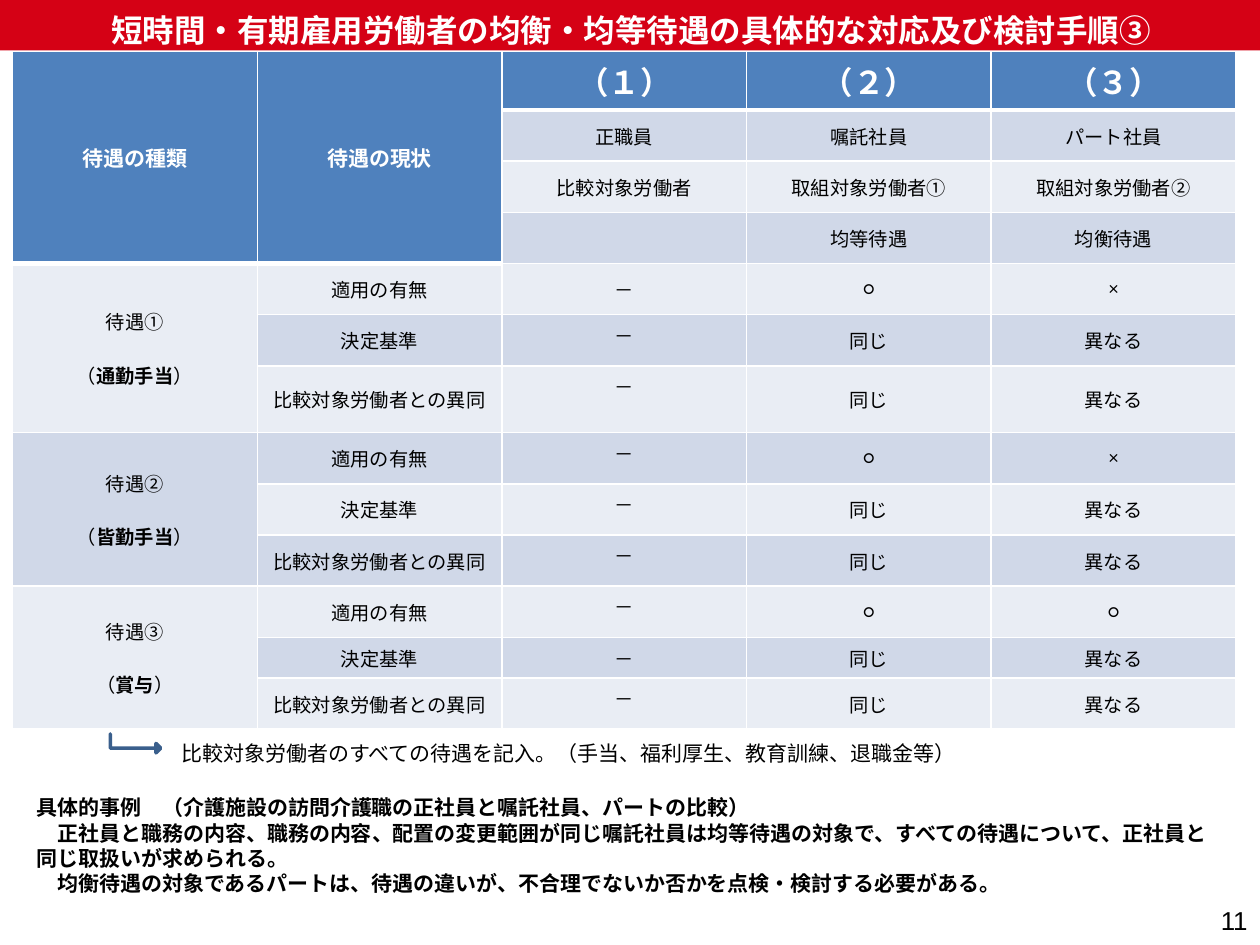
from lxml.etree import SubElement
from pptx import Presentation
from pptx.dml.color import RGBColor
from pptx.enum.shapes import MSO_SHAPE as SHAPE
from pptx.enum.text import MSO_ANCHOR as ANCHOR, PP_ALIGN as ALIGN
from pptx.oxml.ns import qn
from pptx.util import Inches, Pt

W, H = 10, 7.5
COLORS = {
    "title": "D50115", "header": "4F81BD", "dark": "D0D8E8", "light": "E9EDF4",
    "arrow_line": "3A5F8C", "white": "FFFFFF", "black": "000000",
}
CJK = "Noto Sans CJK JP"

# Table grid: regular rows share what the two special rows leave
TABLE_X, TABLE_Y, TABLE_W, TABLE_H = 0.1, 0.41, 9.71, 5.31
ROWS, COLS, GROUP = 13, 5, 3
SPECIAL_ROWS = {6: 0.53, 11: 0.31}
ROW_H = (TABLE_H - sum(SPECIAL_ROWS.values())) / (ROWS - len(SPECIAL_ROWS))

HEADINGS = ["待遇の種類", "待遇の現状", "（１）", "（２）", "（３）"]
WORKERS = [
    ["正職員", "嘱託社員", "パート社員"],
    ["比較対象労働者", "取組対象労働者①", "取組対象労働者②"],
    ["", "均等待遇", "均衡待遇"],
]
ITEMS = ["適用の有無", "決定基準", "比較対象労働者との異同"]
BENEFITS = [("待遇①", "通勤手当", "×"), ("待遇②", "皆勤手当", "×"), ("待遇③", "賞与", "○")]


def rgb(name):
    return RGBColor.from_string(COLORS[name])


def write(tf, paragraphs, size=12, font="Calibri", color="black", bold=False,
          align=None, anchor=None, gap=0, indents=()):
    """Fill a frame; a paragraph is a string or a list of (text, bold) runs."""
    tf.word_wrap = True
    if anchor is not None:
        tf.vertical_anchor = anchor
    for i, content in enumerate(paragraphs):
        p = tf.paragraphs[0] if i == 0 else tf.add_paragraph()
        p.alignment = align
        if i and gap:
            p.space_before = Pt(gap)
        if i in indents:
            p._p.get_or_add_pPr().set("indent", str(Pt(size)))
        runs = [(content, bold)] if isinstance(content, str) else content
        for text, is_bold in runs:
            r = p.add_run()
            r.text = text
            r.font.size, r.font.name, r.font.bold = Pt(size), font, is_bold
            r.font.color.rgb = rgb(color)
            SubElement(r._r.get_or_add_rPr(), qn("a:ea"), typeface=CJK)


def add_text(s, x, y, w, h, paragraphs, **fmt):
    tf = s.shapes.add_textbox(*map(Inches, (x, y, w, h))).text_frame
    write(tf, paragraphs, **fmt)


def add_filled(s, kind, x, y, w, h, fill):
    sp = s.shapes.add_shape(kind, *map(Inches, (x, y, w, h)))
    sp.shadow.inherit = False
    sp.fill.solid()
    sp.fill.fore_color.rgb = rgb(fill)
    sp.line.fill.background()
    return sp


def style_cell(cell, fill, top=1, bottom=1):
    tc_pr = cell._tc.get_or_add_tcPr()
    for side, width in (("L", 1), ("R", 1), ("T", top), ("B", bottom)):
        ln = SubElement(tc_pr, qn(f"a:ln{side}"), w=str(Pt(width)))
        solid = SubElement(ln, qn("a:solidFill"))
        SubElement(solid, qn("a:srgbClr"), val=COLORS["white"])
    cell.fill.solid()
    cell.fill.fore_color.rgb = rgb(fill)


def fill_cell(cell, paragraphs, anchor=ANCHOR.MIDDLE, **fmt):
    cell.vertical_anchor = anchor
    write_frame = cell.text_frame
    write(write_frame, paragraphs, align=ALIGN.CENTER, **fmt)


def add_table(s):
    box = map(Inches, (TABLE_X, TABLE_Y, TABLE_W, TABLE_H))
    table = s.shapes.add_table(ROWS, COLS, *box).table
    for col in table.columns:
        col.width = Inches(TABLE_W / COLS)
    for r, row in enumerate(table.rows):
        row.height = Inches(SPECIAL_ROWS.get(r, ROW_H))

    # Header block is four rows deep on the left and one row on the right
    for r in range(ROWS):
        for c in range(COLS):
            depth = 4 if c < 2 else 1
            is_header = r < depth
            band = "dark" if r % 2 else "light"
            style_cell(table.cell(r, c), "header" if is_header else band,
                       top=3 if r == depth else 1, bottom=3 if is_header else 1)

    # Headings
    for c, text in enumerate(HEADINGS):
        if c < 2:
            table.cell(0, c).merge(table.cell(3, c))
        fill_cell(table.cell(0, c), [text], size=12 if c < 2 else 18,
                  color="white", bold=True)
    for r, names in enumerate(WORKERS, 1):
        for c, text in enumerate(names, 2):
            if text:
                fill_cell(table.cell(r, c), [text], size=11)

    # One group of three rows for each benefit
    for g, (label, benefit, part_applies) in enumerate(BENEFITS):
        first = 4 + g * GROUP
        table.cell(first, 0).merge(table.cell(first + GROUP - 1, 0))
        name = [("（", False), (benefit, True), ("）", False)]
        fill_cell(table.cell(first, 0), [label, name], size=11, gap=14.6)
        for i, item in enumerate(ITEMS):
            r = first + i
            verdicts = ["同じ", "異なる"] if i else ["○", part_applies]
            for c, text in enumerate([item, "－", *verdicts], 1):
                top = c == 2 and r > 4
                fill_cell(table.cell(r, c), [text], size=11,
                          anchor=ANCHOR.TOP if top else ANCHOR.MIDDLE)


def add_title(s):
    bar = add_filled(s, SHAPE.RECTANGLE, 0, 0, W, 0.4, "title")
    tf = bar.text_frame
    tf.margin_left, tf.margin_top = Inches(0.11), Inches(0.07)
    tf.margin_right, tf.margin_bottom = Inches(0.09), 0
    write(tf, ["短時間・有期雇用労働者の均衡・均等待遇の具体的な対応及び検討手順③"],
          size=18, font=CJK, color="white", bold=True,
          align=ALIGN.CENTER, anchor=ANCHOR.MIDDLE)


def add_arrow(s):
    arrow = add_filled(s, SHAPE.BENT_UP_ARROW, 1, 5.7, 0.15, 0.4, "header")
    arrow.rotation = 90
    for i, value in enumerate((0, 0.25, 0.25)):
        arrow.adjustments[i] = value
    arrow.line.color.rgb = rgb("arrow_line")
    arrow.line.width = Pt(2)


def main():
    prs = Presentation()
    prs.slide_width, prs.slide_height = Inches(W), Inches(H)
    s = prs.slides.add_slide(prs.slide_layouts[6])

    add_table(s)
    add_title(s)

    # Note under the table
    add_text(s, 1.34, 5.83, 9.03, 0.3,
             ["比較対象労働者のすべての待遇を記入。（手当、福利厚生、教育訓練、退職金等）"])
    add_arrow(s)

    # Worked example
    add_text(s, 0.19, 6.26, 9.62, 0.91, [
        "具体的事例　（介護施設の訪問介護職の正社員と嘱託社員、パートの比較）",
        "正社員と職務の内容、職務の内容、配置の変更範囲が同じ嘱託社員は均等待遇の対象で、"
        "すべての待遇について、正社員と同じ取扱いが求められる。",
        "均衡待遇の対象であるパートは、待遇の違いが、不合理でないか否かを点検・検討する必要がある。",
    ], bold=True, indents=(1, 2))

    # Page number
    add_text(s, 7.67, 7.1, W - 7.67, H - 7.1, ["11"], size=14.8, font="Arial",
             align=ALIGN.RIGHT, anchor=ANCHOR.MIDDLE)
    prs.save("out.pptx")


if __name__ == "__main__":
    main()
